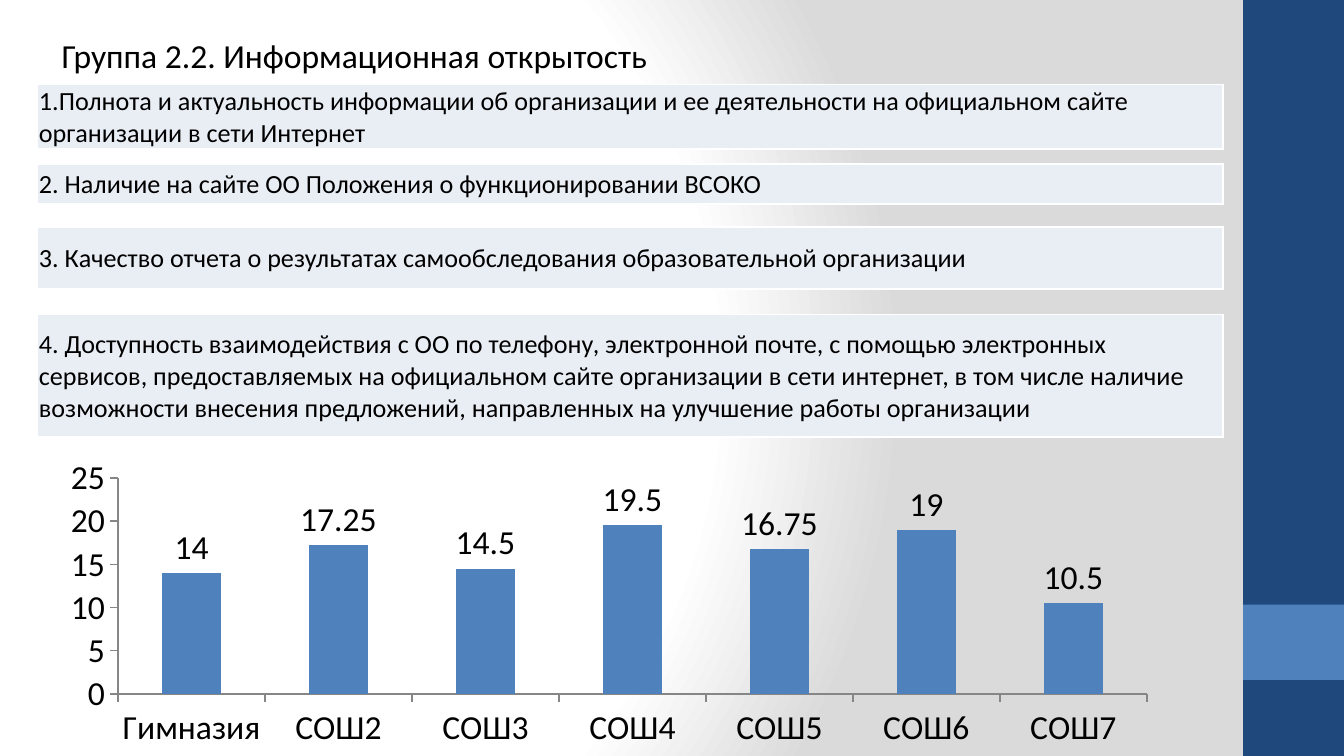
import pptx
import pptx.chart.data
import pptx.dml.color
import pptx.enum.chart
import pptx.enum.shapes
import pptx.enum.text
import pptx.oxml
import pptx.oxml.ns
import pptx.util
from pptx.util import Inches

FONT = "Calibri"
COLORS = {
    "text": "000000",
    "band": "1F497D",
    "accent": "4F81BD",
    "row": "E9EDF4",
    "border": "FFFFFF",
    "axis": "868686",
    "bg_light": "FFFFFF",
    "bg_dark": "DADADA",
}
WIDTH = Inches(10)
HEIGHT = WIDTH * 9 // 16

TITLE = "Группа 2.2. Информационная открытость"
# (top, height, alignment, text)
LEFT, JUSTIFY = pptx.enum.text.PP_ALIGN.LEFT, pptx.enum.text.PP_ALIGN.JUSTIFY
CRITERIA = [
    (0.63, 0.46, LEFT, "1.Полнота и актуальность информации об организации и ее деятельности "
     "на официальном сайте организации в сети Интернет"),
    (1.22, 0.3, JUSTIFY, "2. Наличие на сайте ОО Положения о функционировании ВСОКО"),
    (1.69, 0.46, LEFT, "3. Качество отчета о результатах самообследования "
     "образовательной организации"),
    (2.34, 0.91, LEFT, "4. Доступность взаимодействия с ОО по телефону, электронной почте, "
     "с помощью электронных сервисов, предоставляемых на официальном сайте организации "
     "в сети интернет, в том числе наличие возможности внесения предложений, "
     "направленных на улучшение работы организации"),
]
SCORES = {"Гимназия": 14, "СОШ2": 17.25, "СОШ3": 14.5, "СОШ4": 19.5,
          "СОШ5": 16.75, "СОШ6": 19, "СОШ7": 10.5}
# (top, height, colour) of the blocks at the right edge
SIDE_BLOCKS = [(0, HEIGHT, "band"), (Inches(4.5), Inches(0.56), "accent")]


def rgb(name):
    return pptx.dml.color.RGBColor.from_string(COLORS[name])


def style_font(font, size):
    font.name = FONT
    font.size = pptx.util.Pt(size)
    font.color.rgb = rgb("text")


def set_background(s):
    """Circular gradient, light on the left and grey on the right."""
    stops = "".join(
        f'<a:gs pos="{pos * 1000}"><a:srgbClr val="{COLORS[name]}"/></a:gs>'
        for pos, name in [(0, "bg_light"), (75, "bg_light"), (100, "bg_dark")])
    bg = pptx.oxml.parse_xml(
        f'<p:bg {pptx.oxml.ns.nsdecls("p", "a")}><p:bgPr><a:gradFill rotWithShape="1">'
        f'<a:gsLst>{stops}</a:gsLst><a:path path="circle">'
        '<a:fillToRect l="20000" t="50000" r="100000" b="50000"/></a:path>'
        '</a:gradFill><a:effectLst/></p:bgPr></p:bg>')
    s.element.cSld.insert(0, bg)


def add_side_block(s, top, height, color):
    block = s.shapes.add_shape(pptx.enum.shapes.MSO_SHAPE.RECTANGLE, Inches(9.25),
                               top, Inches(0.75), height)
    block.shadow.inherit = False
    block.fill.solid()
    block.fill.fore_color.rgb = rgb(color)
    block.line.fill.background()


def add_title(s):
    tf = s.shapes.add_textbox(Inches(0.36), Inches(0.21), Inches(4.61), Inches(0.4)).text_frame
    tf.word_wrap = False
    tf.auto_size = pptx.enum.text.MSO_AUTO_SIZE.SHAPE_TO_FIT_TEXT
    tf.text = TITLE
    style_font(tf.paragraphs[0].runs[0].font, 18)


def set_borders(cell):
    tc_pr = cell._tc.get_or_add_tcPr()
    for i, side in enumerate(("lnL", "lnR", "lnT", "lnB")):
        tc_pr.insert(i, pptx.oxml.parse_xml(
            f'<a:{side} {pptx.oxml.ns.nsdecls("a")} w="12700"><a:solidFill>'
            f'<a:srgbClr val="{COLORS["border"]}"/></a:solidFill></a:{side}>'))


def add_criterion(s, top, height, align, text):
    table = s.shapes.add_table(1, 1, Inches(0.28), Inches(top),
                               Inches(8.82), Inches(height)).table
    table.first_row = table.horz_banding = False
    cell = table.cell(0, 0)
    cell.margin_left = cell.margin_right = cell.margin_top = Inches(0.01)
    cell.margin_bottom = 0
    cell.vertical_anchor = pptx.enum.text.MSO_ANCHOR.MIDDLE
    cell.fill.solid()
    cell.fill.fore_color.rgb = rgb("row")
    set_borders(cell)
    cell.text = text
    p = cell.text_frame.paragraphs[0]
    p.alignment = align
    style_font(p.runs[0].font, 14)


def add_score_chart(s):
    data = pptx.chart.data.CategoryChartData()
    data.categories = list(SCORES)
    data.add_series("Series 1", list(SCORES.values()))
    chart = s.shapes.add_chart(pptx.enum.chart.XL_CHART_TYPE.COLUMN_CLUSTERED, Inches(0.36),
                               Inches(3.36), Inches(8.34), Inches(2.25), data).chart
    style_font(chart.font, 18)
    chart.has_legend = False
    chart.has_title = False
    for axis in (chart.category_axis, chart.value_axis):
        axis.has_major_gridlines = False
        axis.major_tick_mark = pptx.enum.chart.XL_TICK_MARK.OUTSIDE
        axis.minor_tick_mark = pptx.enum.chart.XL_TICK_MARK.NONE
        axis.format.line.color.rgb = rgb("axis")
    chart.value_axis.minimum_scale = 0
    chart.value_axis.maximum_scale = 25
    chart.value_axis.major_unit = 5

    plot = chart.plots[0]
    plot.gap_width = 150
    plot.vary_by_categories = False
    series = plot.series[0]
    series.format.fill.solid()
    series.format.fill.fore_color.rgb = rgb("accent")
    labels = series.data_labels
    labels.show_value = True
    labels.position = pptx.enum.chart.XL_LABEL_POSITION.OUTSIDE_END
    style_font(labels.font, 18)


def main():
    prs = pptx.Presentation()
    prs.slide_width, prs.slide_height = WIDTH, HEIGHT
    s = prs.slides.add_slide(prs.slide_layouts[6])
    set_background(s)
    for block in SIDE_BLOCKS:
        add_side_block(s, *block)
    add_title(s)
    for criterion in CRITERIA:
        add_criterion(s, *criterion)
    add_score_chart(s)
    prs.save("out.pptx")


if __name__ == "__main__":
    main()
